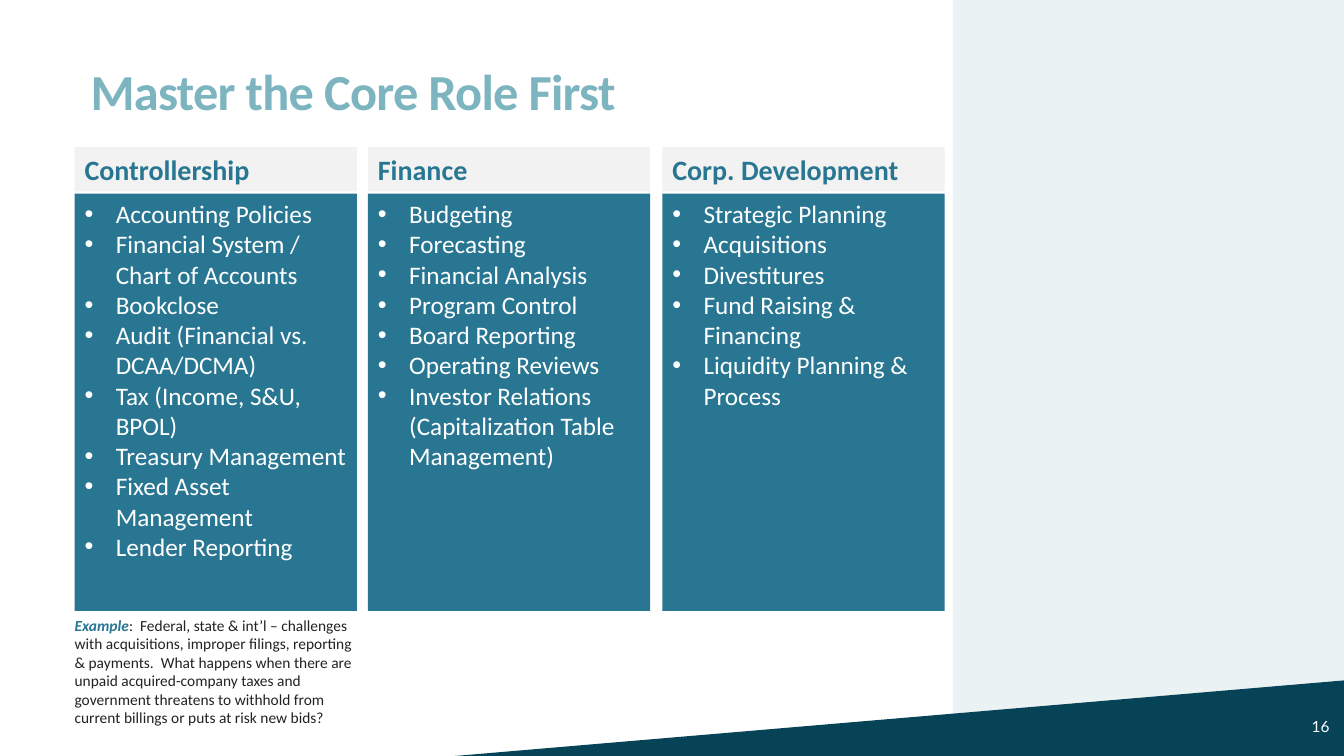
from lxml import etree
from pptx import Presentation
from pptx.dml.color import RGBColor
from pptx.enum.shapes import MSO_SHAPE
from pptx.enum.text import MSO_ANCHOR, PP_ALIGN
from pptx.oxml.ns import qn
from pptx.util import Emu, Pt

PX = 9144
RECTANGLE = MSO_SHAPE.RECTANGLE
RIGHT_TRIANGLE = MSO_SHAPE.RIGHT_TRIANGLE
TOP, MIDDLE, BOTTOM = MSO_ANCHOR.TOP, MSO_ANCHOR.MIDDLE, MSO_ANCHOR.BOTTOM
LEFT = PP_ALIGN.LEFT

TEAL, PALE_TEAL, DARK_TEAL = "287692", "D7E6EB", "074356"
TITLE_TEAL, LIGHT_GRAY, INK, WHITE = "7CB4C0", "F2F2F2", "222222", "FFFFFF"

COLUMNS = [
    ("Controllership", [
        "Accounting Policies",
        "Financial System / Chart of Accounts",
        "Bookclose",
        "Audit (Financial vs. DCAA/DCMA)",
        "Tax (Income, S&U, BPOL)",
        "Treasury Management",
        "Fixed Asset Management",
        "Lender Reporting",
    ]),
    ("Finance", [
        "Budgeting",
        "Forecasting",
        "Financial Analysis",
        "Program Control",
        "Board Reporting",
        "Operating Reviews",
        "Investor Relations (Capitalization Table Management)",
    ]),
    ("Corp. Development", [
        "Strategic Planning",
        "Acquisitions",
        "Divestitures",
        "Fund Raising & Financing",
        "Liquidity Planning & Process",
    ]),
]
EXAMPLE = (
    ":  Federal, state & int’l – challenges with acquisitions, improper filings, "
    "reporting & payments.  What happens when there are unpaid acquired-company "
    "taxes and government threatens to withhold from current billings or puts at "
    "risk new bids?"
)


def color(value):
    return RGBColor.from_string(value)


def px(*lengths):
    return [Emu(length * PX) for length in lengths]


def add_block(slide, box, fill, preset=RECTANGLE):
    shape = slide.shapes.add_shape(preset, *px(*box))
    shape.shadow.inherit = False
    shape.fill.solid()
    shape.fill.fore_color.rgb = color(fill)
    shape.line.fill.background()
    return shape


def prepare_text(shape, anchor):
    frame = shape.text_frame
    frame.word_wrap = True
    frame.vertical_anchor = anchor
    frame.paragraphs[0].alignment = LEFT
    return frame


def add_text_box(slide, box, anchor):
    return prepare_text(slide.shapes.add_textbox(*px(*box)), anchor)


def add_run(paragraph, text, size, ink, bold=False, italic=False, name="Calibri"):
    run = paragraph.add_run()
    run.text = text
    run.font.name = name
    run.font.size = Pt(size)
    run.font.bold = bold
    run.font.italic = italic
    run.font.color.rgb = color(ink)
    return run


def add_bullet(paragraph):
    properties = paragraph._p.get_or_add_pPr()
    properties.set("marL", str(31 * PX))
    properties.set("indent", str(-31 * PX))
    etree.SubElement(properties, qn("a:buFont")).set("typeface", "Arial")
    etree.SubElement(properties, qn("a:buChar")).set("char", "•")


def add_backdrop(slide, width, height):
    panel = add_block(slide, (945, 0, width - 945, height), PALE_TEAL)
    fill = panel.fill._xPr.find(qn("a:solidFill"))
    etree.SubElement(fill[0], qn("a:alpha")).set("val", "50000")
    wedge = add_block(slide, (451, height - 75, width - 451, 75), DARK_TEAL, RIGHT_TRIANGLE)
    wedge._element.spPr.find(qn("a:xfrm")).set("flipH", "1")


def add_title(slide, box):
    paragraph = add_text_box(slide, box, BOTTOM).paragraphs[0]
    paragraph.line_spacing = 0.85
    run = add_run(paragraph, "Master the Core Role First", 36, TITLE_TEAL, bold=True)
    run.font._element.set("spc", "-50")


def add_column(slide, box, heading, items):
    left, top, width, height = box
    header = add_block(slide, (left, top, width, 44), LIGHT_GRAY)
    add_run(prepare_text(header, TOP).paragraphs[0], heading, 20, TEAL, bold=True)
    body = add_block(slide, (left, top + 46, width, height - 46), TEAL)
    frame = prepare_text(body, TOP)
    for index, item in enumerate(items):
        paragraph = frame.add_paragraph() if index else frame.paragraphs[0]
        paragraph.alignment = LEFT
        add_bullet(paragraph)
        add_run(paragraph, item, 18, WHITE)


def add_example(slide, box):
    frame = add_text_box(slide, box, TOP)
    frame.margin_left = frame.margin_right = 0
    paragraph = frame.paragraphs[0]
    add_run(paragraph, "Example", 11, TEAL, bold=True, italic=True)
    add_run(paragraph, EXAMPLE, 11, INK)


def add_page_number(slide, box):
    frame = add_text_box(slide, box, MIDDLE)
    frame.margin_right = 0
    add_run(frame.paragraphs[0], "16", 11, WHITE, name="Lato")


def main():
    width, height = 1333, 750
    presentation = Presentation()
    presentation.slide_width, presentation.slide_height = px(width, height)
    slide = presentation.slides.add_slide(presentation.slide_layouts[6])
    add_backdrop(slide, width, height)
    add_title(slide, (80, 34, 1173, 91))
    for index, (heading, items) in enumerate(COLUMNS):
        add_column(slide, (74 + index * 583 // 2, 146, 280, 460), heading, items)
    add_example(slide, (74, 606, 280, 120))
    add_page_number(slide, (1291, 701, 42, 40))
    presentation.save("out.pptx")


if __name__ == "__main__":
    main()
